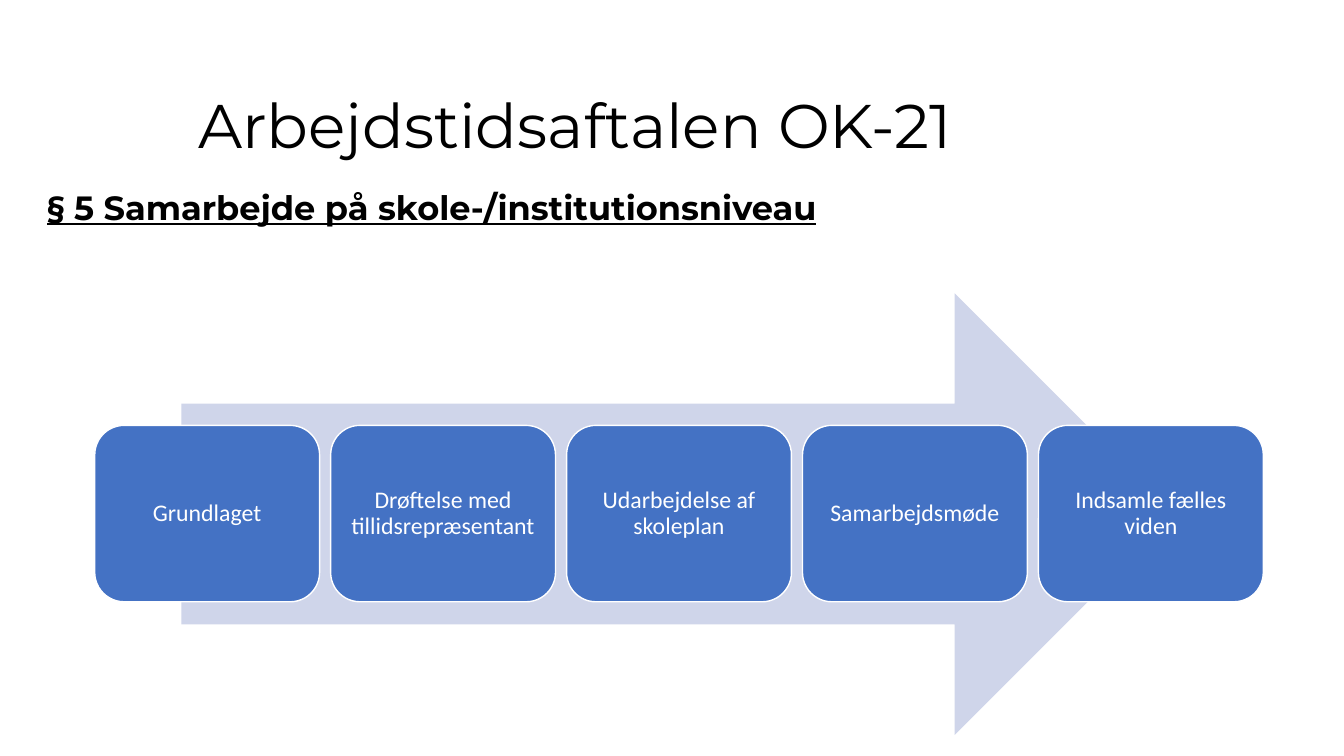
import pptx
import pptx.dml.color
import pptx.enum.shapes
import pptx.enum.text
import pptx.util

PX = 9144  # EMU per px, at 100 px to the inch
ALIGN = pptx.enum.text.PP_ALIGN
ANCHOR = pptx.enum.text.MSO_ANCHOR
SHAPES = pptx.enum.shapes.MSO_SHAPE


def color(value):
    return pptx.dml.color.RGBColor.from_string(value)


def set_text(shape, text, font_name, size, font_color, align, anchor):
    frame = shape.text_frame
    frame.text = text
    frame.word_wrap = True
    frame.auto_size = pptx.enum.text.MSO_AUTO_SIZE.NONE
    frame.vertical_anchor = anchor
    paragraph = frame.paragraphs[0]
    paragraph.alignment = align
    paragraph.line_spacing = 0.9
    font = paragraph.runs[0].font
    font.name = font_name
    font.size = pptx.util.Pt(size)
    font.color.rgb = color(font_color)
    return font


presentation = pptx.Presentation()
presentation.slide_width = 1333 * PX
presentation.slide_height = 750 * PX
slide = presentation.slides.add_slide(presentation.slide_layouts[5])

# Title
title = slide.shapes.title
title.left, title.top, title.width, title.height = 93 * PX, 58 * PX, 955 * PX, 108 * PX
set_text(title, "Arbejdstidsaftalen OK-21", "Montserrat", 44, "000000",
         ALIGN.CENTER, ANCHOR.BOTTOM)

# Section heading
heading = slide.shapes.add_textbox(37 * PX, 185 * PX, 1260 * PX, 60 * PX)
heading_font = set_text(heading, "§ 5 Samarbejde på skole-/institutionsniveau",
                        "Montserrat", 24, "000000", ALIGN.LEFT, ANCHOR.TOP)
heading_font.bold = True
heading_font.underline = True

# Process arrow
arrow = slide.shapes.add_shape(SHAPES.RIGHT_ARROW, 180 * PX, 291 * PX, 986 * PX, 438 * PX)
arrow.shadow.inherit = False
arrow.fill.solid()
arrow.fill.fore_color.rgb = color("CFD5EA")
arrow.line.fill.background()

# Process steps
steps = ["Grundlaget", "Drøftelse med tillidsrepræsentant", "Udarbejdelse af skoleplan",
         "Samarbejdsmøde", "Indsamle fælles viden"]
for index, step in enumerate(steps):
    box = slide.shapes.add_shape(SHAPES.ROUNDED_RECTANGLE, (94 + 234 * index) * PX, 422 * PX,
                                 223 * PX, 175 * PX)
    box.shadow.inherit = False
    box.fill.solid()
    box.fill.fore_color.rgb = color("4472C4")
    box.line.color.rgb = color("FFFFFF")
    box.line.width = pptx.util.Pt(1)
    set_text(box, step, "Calibri", 17, "FFFFFF", ALIGN.CENTER, ANCHOR.MIDDLE)
    frame = box.text_frame
    frame.margin_left = frame.margin_right = 7 * PX
    frame.margin_top = frame.margin_bottom = 7 * PX

presentation.save("out.pptx")
